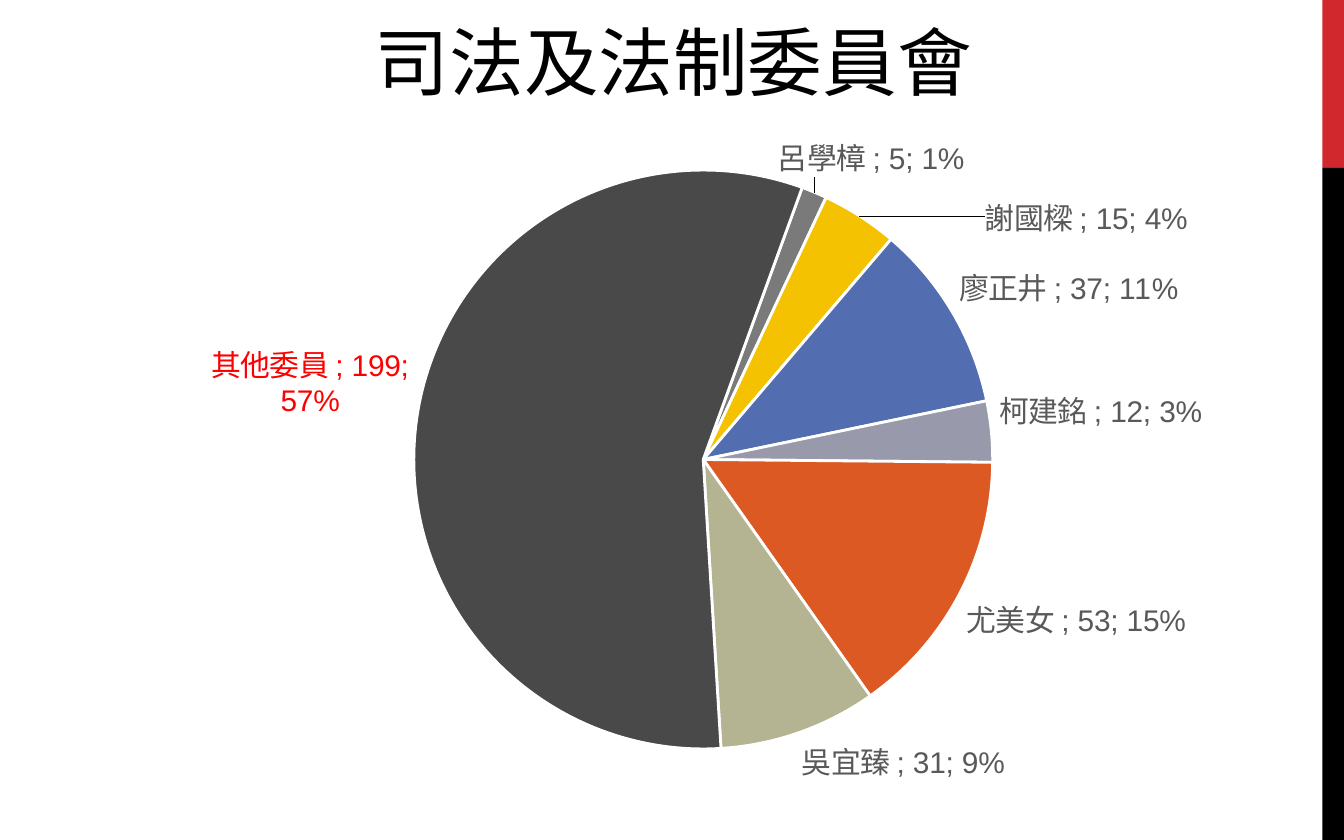
import pptx
import pptx.chart.data
import pptx.dml.color
import pptx.enum.chart
import pptx.enum.shapes
import pptx.enum.text
import pptx.oxml
import pptx.oxml.ns
import pptx.util
from pptx.util import Inches

FONT = "Arial"
COLORS = {
    "red": "D1282E", "black": "000000", "white": "FFFFFF",
    "label": "595959", "highlight": "FF0000",
}
# Member, count, slice colour
MEMBERS = [
    ("呂學樟 ", 5, "7A7A7A"),
    ("謝國樑 ", 15, "F5C201"),
    ("廖正井 ", 37, "526DB0"),
    ("柯建銘 ", 12, "989AAC"),
    ("尤美女 ", 53, "DC5924"),
    ("吳宜臻 ", 31, "B4B392"),
    ("其他委員 ", 199, "494949"),
]
# Slice index: label shift as a share of the chart size
LABEL_SHIFTS = {0: (-0.034, -0.01), 1: (0.104, 0.04)}
OTHERS = 6


def rgb(value):
    return pptx.dml.color.RGBColor.from_string(value)


def format_font(font, size, color):
    font.name = FONT
    font.size = pptx.util.Pt(size)
    font.color.rgb = rgb(color)


def set_text(sp, text, *, size, color, align, spacing):
    tf = sp.text_frame
    tf.word_wrap = True
    tf.vertical_anchor = pptx.enum.text.MSO_ANCHOR.MIDDLE
    tf.margin_left = tf.margin_right = Inches(0.08)
    tf.margin_top = tf.margin_bottom = Inches(0.04)
    p = tf.paragraphs[0]
    p.alignment = align
    p.line_spacing = spacing
    r = p.add_run()
    r.text = text
    format_font(r.font, size, color)


def add_bar(s, top, height, color):
    sp = s.shapes.add_shape(pptx.enum.shapes.MSO_SHAPE.RECTANGLE,
                            Inches(9.84), Inches(top), Inches(0.16), Inches(height))
    sp.shadow.inherit = False
    sp.fill.solid()
    sp.fill.fore_color.rgb = rgb(color)
    sp.line.fill.background()


def chart_xml(tag, content="", **attrs):
    """Build one element of the chart namespace."""
    attr_text = "".join(f' {key}="{value}"' for key, value in attrs.items())
    return pptx.oxml.parse_xml(
        f'<c:{tag} {pptx.oxml.ns.nsdecls("c")}{attr_text}>{content}</c:{tag}>')


def manual_layout(**values):
    parts = "".join(f'<c:{key} val="{value}"/>' for key, value in values.items())
    return chart_xml("layout", f"<c:manualLayout>{parts}</c:manualLayout>")


def show_parts(labels):
    """Show category, value and percent, parted by semicolons."""
    for tag in ("showVal", "showCatName", "showPercent"):
        labels.find(pptx.oxml.ns.qn(f"c:{tag}")).set("val", "1")
    last = labels.find(pptx.oxml.ns.qn("c:showBubbleSize"))
    if last is None:
        last = labels.find(pptx.oxml.ns.qn("c:showPercent"))
    last.addnext(chart_xml("separator", "; "))


def format_labels(series):
    outside = pptx.enum.chart.XL_LABEL_POSITION.OUTSIDE_END
    labels = series.data_labels
    format_font(labels.font, 16, COLORS["label"])
    labels.position = outside
    show_parts(labels._element)

    # Labels with their own place or colour
    for i in [*LABEL_SHIFTS, OTHERS]:
        label = series.points[i].data_label
        format_font(label.font, 16, COLORS["highlight" if i == OTHERS else "label"])
        label.position = outside
    for element in labels._element.findall(pptx.oxml.ns.qn("c:dLbl")):
        show_parts(element)
        idx = element.find(pptx.oxml.ns.qn("c:idx"))
        i = int(idx.get("val"))
        if i in LABEL_SHIFTS:
            x, y = LABEL_SHIFTS[i]
            idx.addnext(manual_layout(x=x, y=y))


def add_pie(s):
    data = pptx.chart.data.CategoryChartData()
    data.categories = [name for name, _, _ in MEMBERS]
    data.add_series("Series 1", [count for _, count, _ in MEMBERS])
    chart = s.shapes.add_chart(pptx.enum.chart.XL_CHART_TYPE.PIE, Inches(0.69),
                               Inches(0.84), Inches(8.62), Inches(5.19), data).chart
    chart.has_title = False
    chart.has_legend = False
    format_font(chart.font, 10, COLORS["black"])

    plot = chart.plots[0]
    plot.vary_by_categories = True
    series = plot.series[0]
    for i, (_, _, color) in enumerate(MEMBERS):
        fmt = series.points[i].format
        fmt.fill.solid()
        fmt.fill.fore_color.rgb = rgb(color)
        fmt.line.color.rgb = rgb(COLORS["white"])
        fmt.line.width = pptx.util.Pt(1.5)
    format_labels(series)

    # Rotation and place of the pie
    pie = plot._element
    for old in pie.findall(pptx.oxml.ns.qn("c:firstSliceAng")):
        pie.remove(old)
    pie.append(chart_xml("firstSliceAng", val=20))
    area = pie.getparent()
    for old in area.findall(pptx.oxml.ns.qn("c:layout")):
        area.remove(old)
    area.insert(0, manual_layout(layoutTarget="inner", xMode="edge", yMode="edge",
                                 x=0.277, y=0.082, w=0.5, h=0.83))


def main():
    prs = pptx.Presentation()
    prs.slide_width, prs.slide_height = Inches(10), Inches(6.25)
    s = prs.slides.add_slide(prs.slide_layouts[5])
    s.background.fill.solid()
    s.background.fill.fore_color.rgb = rgb(COLORS["white"])

    # Side bars
    add_bar(s, 0, 1.25, COLORS["red"])
    add_bar(s, 1.25, 5, COLORS["black"])

    # Chart and title
    add_pie(s)
    title = s.shapes.title
    title.left, title.top = Inches(0.7), Inches(0.19)
    title.width, title.height = Inches(8.62), Inches(0.65)
    set_text(title, "司法及法制委員會", size=40, color=COLORS["black"],
             align=pptx.enum.text.PP_ALIGN.CENTER, spacing=0.8)

    prs.save("out.pptx")


if __name__ == "__main__":
    main()
